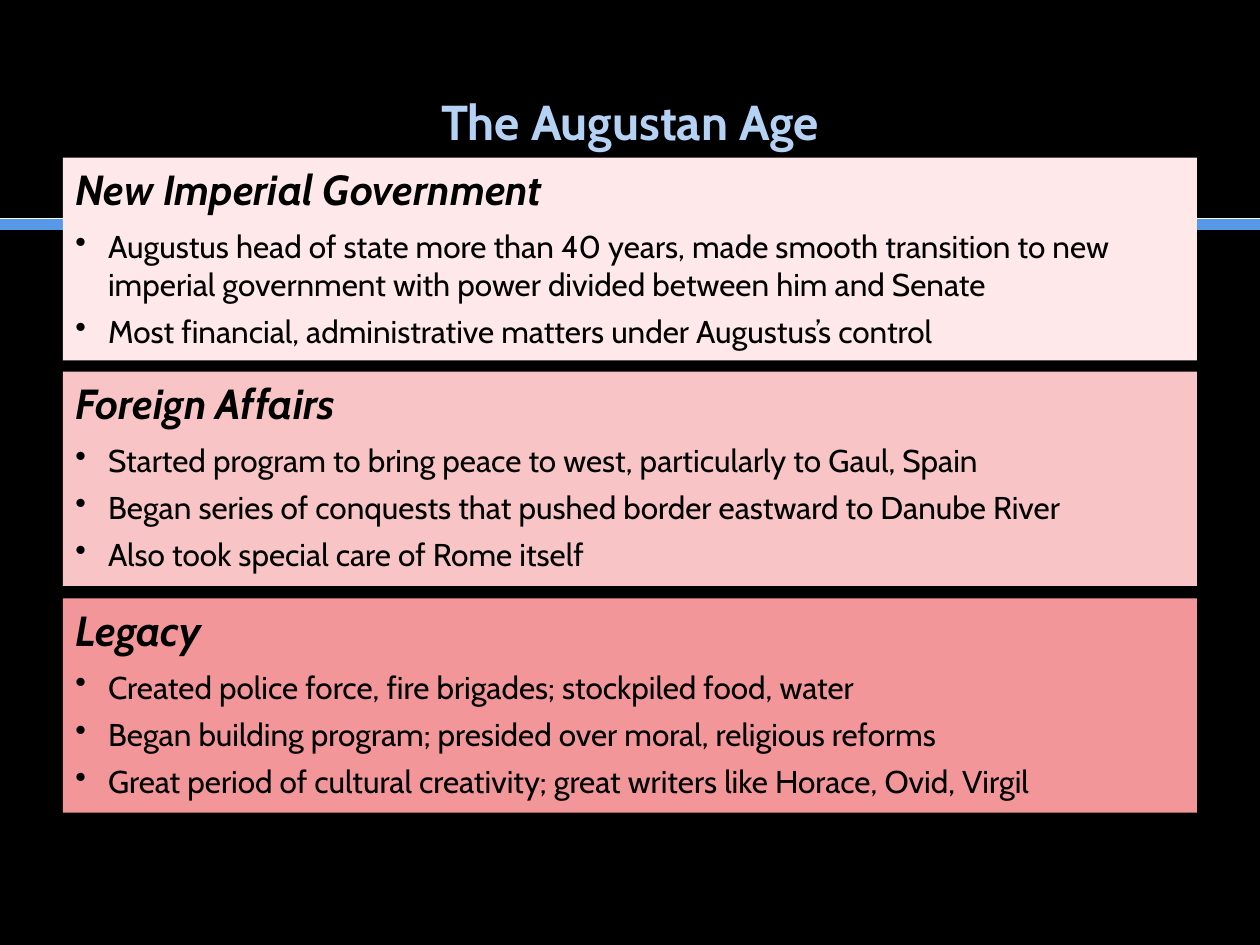
from lxml.etree import SubElement
from pptx import Presentation
from pptx.dml.color import RGBColor as RGB
from pptx.enum.shapes import MSO_CONNECTOR as LINK, MSO_SHAPE as SHAPE
from pptx.enum.text import MSO_ANCHOR as ANCHOR, PP_ALIGN as ALIGN
from pptx.oxml.ns import qn
from pptx.util import Inches, Pt

BLACK = RGB(0x00, 0x00, 0x00)
WHITE = RGB(0xFF, 0xFF, 0xFF)
BLUE = RGB(0x57, 0x99, 0xE8)
SKY = RGB(0xB5, 0xD2, 0xF5)
BLUSH = RGB(0xFE, 0xE8, 0xEA)
PINK = RGB(0xF8, 0xC4, 0xC5)
ROSE = RGB(0xF2, 0x96, 0x99)

# The slide is a grid of square cells
COLS, ROWS = 200, 150
CELL = Inches(10) / COLS
FACE = "Cabin"
HANG = Inches(0.26)

# Top row, row count, fill, heading, bullets
PANELS = [
    (25, 32.2, BLUSH, "New Imperial Government", [
        "Augustus head of state more than 40 years, made smooth transition to new "
        "imperial government with power divided between him and Senate",
        "Most financial, administrative matters under Augustus’s control"]),
    (59, 34, PINK, "Foreign Affairs", [
        "Started program to bring peace to west, particularly to Gaul, Spain",
        "Began series of conquests that pushed border eastward to Danube River",
        "Also took special care of Rome itself"]),
    (95, 34, ROSE, "Legacy", [
        "Created police force, fire brigades; stockpiled food, water",
        "Began building program; presided over moral, religious reforms",
        "Great period of cultural creativity; great writers like Horace, Ovid, Virgil"]),
]


def grid(*cells):
    return [round(n * CELL) for n in cells]


def write(para, text, size=18, color=BLACK, bold=False, italic=False,
          align=ALIGN.LEFT, hang=False, bullet=False, after=0):
    para.alignment = align
    para.space_after = Pt(size * after)
    props = para._p.get_or_add_pPr()
    if hang:
        props.set("marL", str(HANG))
        props.set("indent", str(-HANG))
    if bullet:
        SubElement(props, qn("a:buChar"), char="•")
    run = para.add_run()
    run.text = text
    font = run.font
    font.name, font.size = FACE, Pt(size)
    font.bold, font.italic = bold, italic
    font.color.rgb = color


def rule(slide, row, color, width):
    x, y, end = grid(0, row, COLS)
    line = slide.shapes.add_connector(LINK.STRAIGHT, x, y, end, y)
    line.line.color.rgb = color
    line.line.width = Pt(width)
    SubElement(line._element.spPr, qn("a:effectLst"))


def title(slide, box, text):
    frame = slide.shapes.add_textbox(*grid(*box)).text_frame
    frame.word_wrap = True
    frame.vertical_anchor = ANCHOR.MIDDLE
    write(frame.paragraphs[0], text, size=28, color=SKY, bold=True,
          align=ALIGN.CENTER)


def panel(slide, box, fill, head, points):
    card = slide.shapes.add_shape(SHAPE.RECTANGLE, *grid(*box))
    card.shadow.inherit = False
    card.fill.solid()
    card.fill.fore_color.rgb = fill
    card.line.fill.background()
    frame = card.text_frame
    frame.word_wrap = True
    frame.vertical_anchor = ANCHOR.TOP
    write(frame.paragraphs[0], head, size=24, bold=True, italic=True,
          hang=True, after=0.3)
    for point in points:
        write(frame.add_paragraph(), point, hang=True, bullet=True, after=0.3)


def main():
    deck = Presentation()
    deck.slide_width, deck.slide_height = grid(COLS, ROWS)
    slide = deck.slides.add_slide(deck.slide_layouts[6])
    slide.background.fill.solid()
    slide.background.fill.fore_color.rgb = BLACK

    # Band behind the panels
    rule(slide, 35.6, BLUE, 7)
    rule(slide, 34.6, WHITE, 0.5)

    # Panels and title
    for top, rows, fill, head, points in PANELS:
        panel(slide, (10, top, COLS - 20, rows), fill, head, points)
    title(slide, (13.4, 13.4, COLS - 26.8, 11.6), "The Augustan Age")

    deck.save("out.pptx")


if __name__ == "__main__":
    main()
